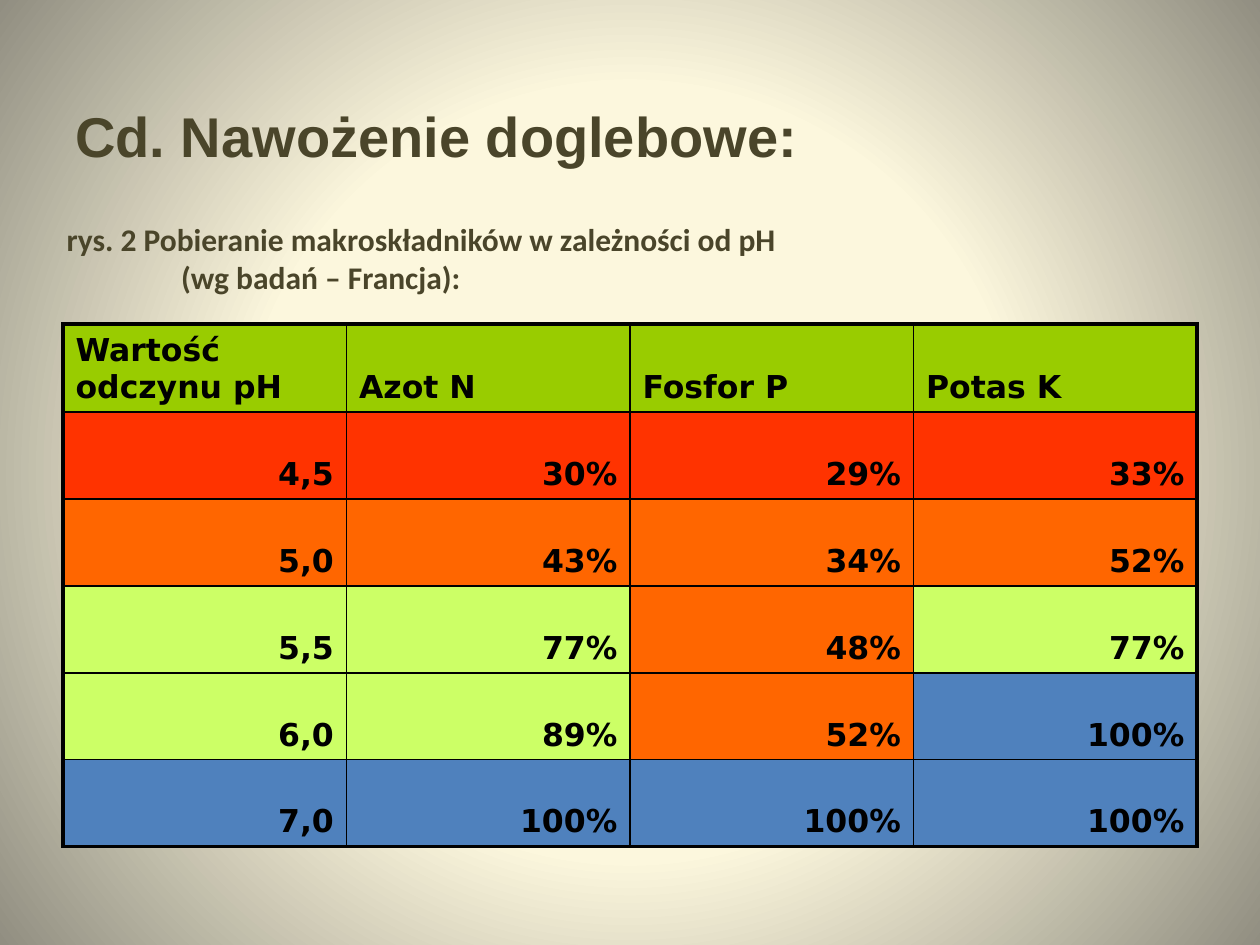
from lxml import etree
from pptx import Presentation
from pptx.dml.color import RGBColor
from pptx.enum.text import MSO_ANCHOR, PP_ALIGN
from pptx.oxml.ns import qn
from pptx.util import Inches, Pt

MID, LOW = MSO_ANCHOR.MIDDLE, MSO_ANCHOR.BOTTOM
LEFT, RIGHT = PP_ALIGN.LEFT, PP_ALIGN.RIGHT

THEME = {
    "glow": "FCF7DD", "edge": "918E81", "ink": "4A452A", "line": "000000",
    "head": "99CC00", "poor": "FF3300", "weak": "FF6600",
    "good": "CCFF66", "full": "4F81BD",
    "title": {"name": "Arial", "size": Pt(32), "bold": True},
    "note": {"name": "Calibri", "size": Pt(18), "bold": True},
    "cell": {"name": "DejaVu Sans", "size": Pt(18), "bold": True},
    "thin": Pt(1), "thick": Pt(2.25),
}


def write(para, text, font, tint, align=LEFT):
    para.alignment = align
    run = para.add_run()
    run.text = text
    for key, value in THEME[font].items():
        setattr(run.font, key, value)
    run.font.color.rgb = RGBColor.from_string(THEME[tint])


def edge(cell, side, width):
    line = etree.SubElement(cell._tc.get_or_add_tcPr(), qn(f"a:ln{side}"), w=str(width))
    fill = etree.SubElement(line, qn("a:solidFill"))
    etree.SubElement(fill, qn("a:srgbClr"), val=THEME["line"])


deck = Presentation()
deck.slide_width, deck.slide_height = Inches(10), Inches(7.5)
slide = deck.slides.add_slide(deck.slide_layouts[6])

back = slide.background.fill
back.gradient()
for stop, tint, place in zip(back.gradient_stops, ("glow", "edge"), (0.49, 1)):
    stop.color.rgb = RGBColor.from_string(THEME[tint])
    stop.position = place
grad = slide._element.find(".//" + qn("a:gradFill"))
grad.remove(grad.find(qn("a:lin")))
round_fill = etree.SubElement(grad, qn("a:path"), path="circle")
etree.SubElement(round_fill, qn("a:fillToRect"), l="50000", t="50000", r="50000", b="50000")

title = slide.shapes.add_textbox(Inches(0.5), Inches(0.52), Inches(9), Inches(1.1)).text_frame
title.word_wrap = True
title.vertical_anchor = MID
write(title.paragraphs[0], "Cd. Nawożenie doglebowe:", "title", "ink")

rows = [
    ("Wartość odczynu pH", "Azot N", "Fosfor P", "Potas K"),
    ("4,5", 30, 29, 33),
    ("5,0", 43, 34, 52),
    ("5,5", 77, 48, 77),
    ("6,0", 89, 52, 100),
    ("7,0", 100, 100, 100),
]
steps = ((34, "poor"), (60, "weak"), (100, "good"), (101, "full"))
high, wide = len(rows), len(rows[0])

table = slide.shapes.add_table(
    high, wide, Inches(0.5), Inches(2.57), Inches(9), Inches(0.69 * high)).table
for r, row in enumerate(rows):
    for c, value in enumerate(row):
        cell = table.cell(r, c)
        cell.vertical_anchor = LOW
        rims = {"L": c == 0, "R": c == wide - 1, "T": r == 0, "B": r == high - 1}
        for side, outer in rims.items():
            edge(cell, side, THEME["thick" if outer else "thin"])
        level = row[max(c, 1)]
        tint = "head" if r == 0 else next(name for top, name in steps if level < top)
        cell.fill.solid()
        cell.fill.fore_color.rgb = RGBColor.from_string(THEME[tint])
        text = f"{value}%" if r and c else value
        write(cell.text_frame.paragraphs[0], text, "cell", "line", RIGHT if r else LEFT)

note = slide.shapes.add_textbox(Inches(0.43), Inches(1.7), Inches(9.06), Inches(0.71)).text_frame
note.word_wrap = True
write(note.paragraphs[0], "rys. 2 Pobieranie makroskładników w zależności od pH", "note", "ink")
source = note.add_paragraph()
write(source, "(wg badań – Francja):", "note", "ink")
source._p.get_or_add_pPr().set("marL", str(Inches(0.91)))

deck.save("out.pptx")
